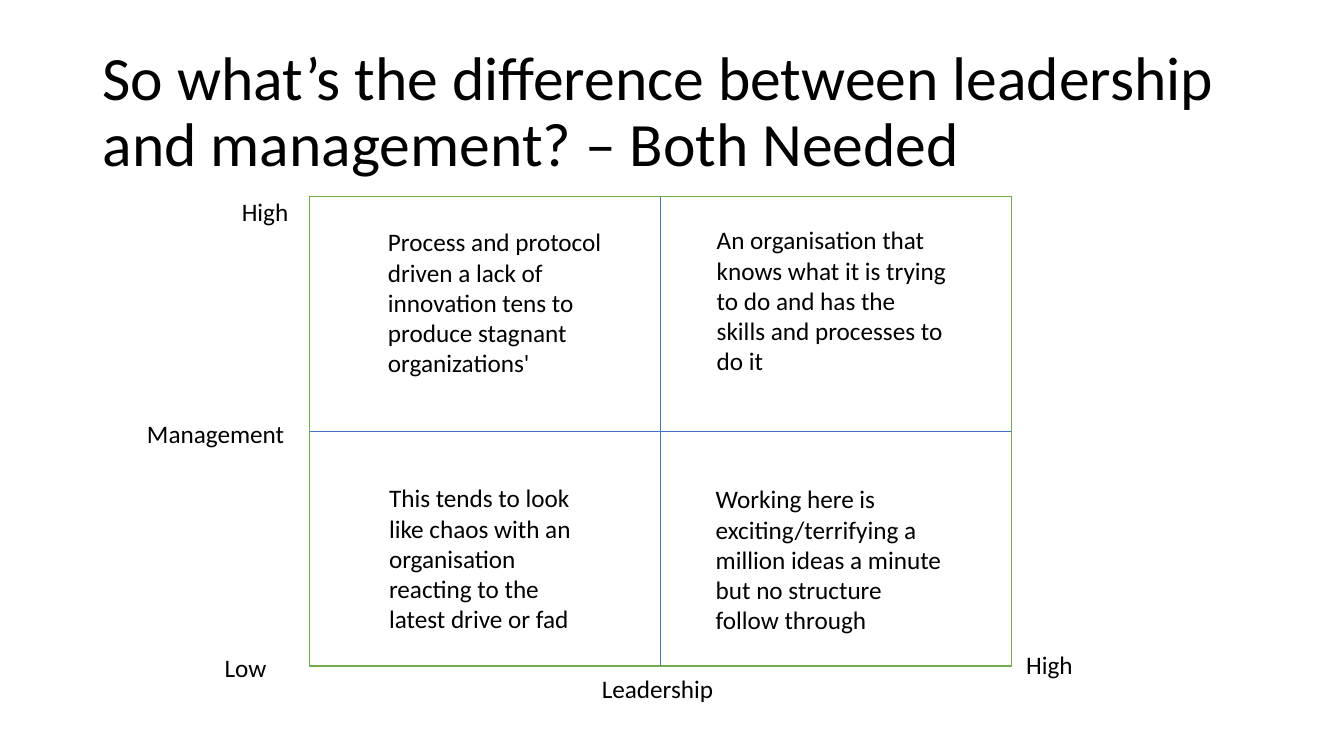
from dataclasses import dataclass

from lxml import etree
from pptx import Presentation, util as u
from pptx.dml.color import RGBColor
from pptx.enum import shapes, text
from pptx.oxml.ns import qn

PX = 9144  # 100 px to the inch


@dataclass(frozen=True)
class Theme:
    font: str = "Calibri"
    ink: str = "000000"
    paper: str = "FFFFFF"
    frame: str = "70AD47"
    axis: str = "4472C4"
    head: int = 44
    body: int = 18


T = Theme()


def rgb(code):
    return RGBColor.from_string(code)


def px(*nums):
    return [u.Emu(n * PX) for n in nums]


def write(slide, box, words, size=T.body, color=T.ink, space=None,
          anchor=text.MSO_ANCHOR.TOP):
    frame = slide.shapes.add_textbox(*px(*box)).text_frame
    frame.word_wrap = True
    frame.vertical_anchor = anchor
    para = frame.paragraphs[0]
    if space:
        para.line_spacing = space
    run = para.add_run()
    run.text = words
    run.font.name = T.font
    run.font.size = u.Pt(size)
    run.font.color.rgb = rgb(color)


def title(slide, box):
    write(slide, box,
          "So what’s the difference between leadership and management? – Both Needed",
          size=T.head, space=0.9, anchor=text.MSO_ANCHOR.MIDDLE)


def divide(slide, rect, start, end):
    line = slide.shapes.add_connector(shapes.MSO_CONNECTOR.STRAIGHT, 0, 0, 0, 0)
    line.begin_connect(rect, start)
    line.end_connect(rect, end)
    line.line.color.rgb = rgb(T.axis)
    line.line.width = u.Pt(0.5)
    etree.SubElement(line._element.spPr, qn("a:effectLst"))


def matrix(slide, box):
    left, top, wide, high = box

    # Frame and its two dividers
    rect = slide.shapes.add_shape(shapes.MSO_SHAPE.RECTANGLE, *px(*box))
    rect.shadow.inherit = False
    rect.fill.solid()
    rect.fill.fore_color.rgb = rgb(T.paper)
    rect.line.color.rgb = rgb(T.frame)
    rect.line.width = u.Pt(1)
    divide(slide, rect, 0, 2)
    divide(slide, rect, 1, 3)

    # Axis labels, then quadrant notes: offset from the frame, size, words
    parts = [
        (-94, high - 19, 80, 40, "Low"),
        (-77, -5, 80, 40, "High"),
        (wide + 5, high - 22, 80, 40, "High"),
        (-171, high // 2 - 18, 164, 42, "Management"),
        (wide // 2 - 68, high + 2, 138, 40, "Leadership"),
        (69, 279, 211, 162, "This tends to look like chaos with an organisation "
                            "reacting to the latest drive or fad"),
        (393, 280, 249, 162, "Working here is exciting/terrifying a million ideas "
                             "a minute but no structure follow through"),
        (68, 25, 236, 162, "Process and protocol driven a lack of innovation tens "
                           "to produce stagnant organizations'"),
        (394, 23, 249, 162, "An organisation that knows what it is trying to do "
                            "and has the skills and processes to do it"),
    ]
    for dx, dy, w, h, words in parts:
        write(slide, (left + dx, top + dy, w, h), words)


def main():
    deck = Presentation()
    deck.slide_width, deck.slide_height = px(1333, 750)
    slide = deck.slides.add_slide(deck.slide_layouts[6])
    title(slide, (92, 40, 1150, 145))
    matrix(slide, (307, 195, 696, 466))
    deck.save("out.pptx")


if __name__ == "__main__":
    main()
